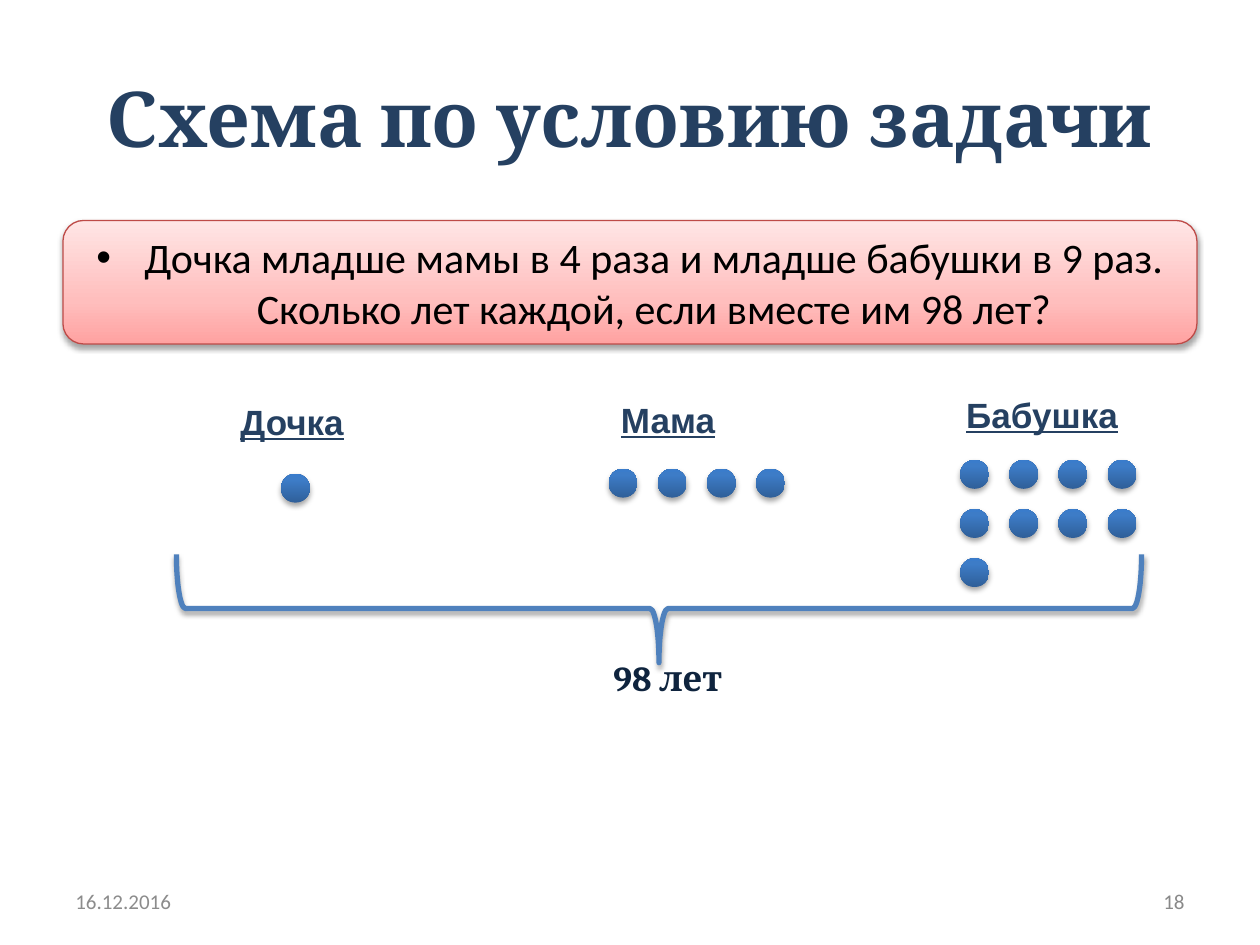
from lxml import etree
from pptx import Presentation, util as u
from pptx.dml.color import RGBColor
from pptx.enum import shapes, text
from pptx.oxml import ns

NAVY = RGBColor(0x25, 0x40, 0x61)
DARK_NAVY = RGBColor(0x0F, 0x24, 0x3E)
BLUE = RGBColor(0x4F, 0x81, 0xBD)
RED = RGBColor(0xBE, 0x4B, 0x48)
BLACK = RGBColor(0, 0, 0)
DATE_GRAY = RGBColor(0x8C, 0x8C, 0x8C)
NUMBER_GRAY = RGBColor(0x89, 0x89, 0x89)
DOT_GRADIENT = [(0, RGBColor(0x2F, 0x5F, 0x99)),
                (80, RGBColor(0x3D, 0x7C, 0xC7)),
                (100, RGBColor(0x3A, 0x7C, 0xCB))]
PANEL_GRADIENT = [(0, RGBColor(0xFF, 0xA2, 0xA1)),
                  (35, RGBColor(0xFF, 0xBE, 0xBD)),
                  (100, RGBColor(0xFF, 0xE5, 0xE5))]
LEFT, CENTER, RIGHT = text.PP_ALIGN.LEFT, text.PP_ALIGN.CENTER, text.PP_ALIGN.RIGHT
TOP, MIDDLE = text.MSO_ANCHOR.TOP, text.MSO_ANCHOR.MIDDLE


def add_child(parent, tag, **attributes):
    values = {name: str(value) for name, value in attributes.items()}
    return etree.SubElement(parent, ns.qn(tag), values)


class SlideBuilder:
    DOT_SIZE = 0.23
    DOT_STEP = 0.39
    DOTS_PER_ROW = 4

    def __init__(self, slide):
        self.slide = slide

    def set_text(self, shape, words, size, font, color, align=LEFT, anchor=TOP,
                 bold=False, underline=False, wrap=True, bullet=False):
        frame = shape.text_frame
        frame.text = words
        frame.word_wrap = wrap
        frame.vertical_anchor = anchor
        paragraph = frame.paragraphs[0]
        paragraph.alignment = align
        if bullet:
            indent = u.Inches(0.38)
            properties = paragraph._p.get_or_add_pPr()
            properties.set("marL", str(int(indent)))
            properties.set("indent", str(-int(indent)))
            add_child(properties, "a:buFont", typeface="Arial")
            add_child(properties, "a:buChar", char="•")
        style = paragraph.runs[0].font
        style.size, style.name = u.Pt(size), font
        style.bold, style.underline = bold, underline
        style.color.rgb = color

    def label(self, left, top, width, height, words, size, font, color, **style):
        box = self.slide.shapes.add_textbox(
            *map(u.Inches, (left, top, width, height)))
        self.set_text(box, words, size, font, color, **style)

    def shape(self, kind, left, top, width, height, gradient=None, line=None,
              line_width=0.75, parent=None):
        shape = (parent or self.slide).shapes.add_shape(
            kind, *map(u.Inches, (left, top, width, height)))
        if gradient:
            self.fill_gradient(shape, gradient)
        else:
            shape.fill.background()
        if line is None:
            shape.line.fill.background()
        else:
            shape.line.color.rgb = line
            shape.line.width = u.Pt(line_width)
        self.add_shadow(shape)
        return shape

    def fill_gradient(self, shape, gradient):
        shape.fill.gradient()
        shape.fill.gradient_angle = 90
        stops = shape.element.spPr.find(".//" + ns.qn("a:gsLst"))
        for stop in list(stops):
            stops.remove(stop)
        for position, color in gradient:
            stop = add_child(stops, "a:gs", pos=position * 1000)
            add_child(stop, "a:srgbClr", val=color)

    def add_shadow(self, shape):
        shape.shadow.inherit = False
        effects = shape.element.spPr.find(ns.qn("a:effectLst"))
        shadow = add_child(effects, "a:outerShdw", blurRad=int(u.Pt(3.1)),
                           dist=int(u.Pt(1.8)), dir=90 * 60000, rotWithShape=0)
        color = add_child(shadow, "a:srgbClr", val="000000")
        add_child(color, "a:alpha", val=35000)

    def dots(self, left, top, count):
        group = self.slide.shapes.add_group_shape() if count > 1 else None
        for index in range(count):
            row, column = divmod(index, self.DOTS_PER_ROW)
            self.shape(shapes.MSO_SHAPE.OVAL, left + column * self.DOT_STEP,
                       top + row * self.DOT_STEP, self.DOT_SIZE, self.DOT_SIZE,
                       DOT_GRADIENT, parent=group)

    def panel(self, left, top, width, height, words):
        panel = self.shape(shapes.MSO_SHAPE.ROUNDED_RECTANGLE, left, top, width,
                           height, PANEL_GRADIENT, RED)
        self.set_text(panel, words, 24, "Calibri", BLACK, align=CENTER,
                      anchor=MIDDLE, bullet=True)

    def brace(self, left, top, width, height):
        brace = self.shape(shapes.MSO_SHAPE.RIGHT_BRACE, left, top, width, height,
                           line=BLUE, line_width=3)
        brace.rotation = 90


def main():
    presentation = Presentation()
    presentation.slide_width, presentation.slide_height = u.Inches(10), u.Inches(7.5)
    builder = SlideBuilder(presentation.slides.add_slide(presentation.slide_layouts[6]))

    # Title and footer
    builder.label(0.5, 0.3, 9, 1.25, "Схема по условию задачи", 44, "Cambria", NAVY,
                  align=CENTER, anchor=MIDDLE, bold=True)
    builder.label(0.5, 6.95, 2.33, 0.4, "16.12.2016", 12, "Calibri", DATE_GRAY,
                  anchor=MIDDLE)
    builder.label(7.17, 6.95, 2.33, 0.4, "18", 12, "Calibri", NUMBER_GRAY,
                  align=RIGHT, anchor=MIDDLE)

    # Problem statement
    builder.panel(0.5, 1.75, 9, 0.98,
                  "Дочка младше мамы в 4 раза и младше бабушки в 9 раз. "
                  "Сколько лет каждой, если вместе им 98 лет?")

    # Family members: label box, then dots for the parts of the age
    for words, left, top, width, dots_left, dots_top, count in [
            ("Дочка", 1.81, 3.13, 1.03, 2.23, 3.76, 1),
            ("Мама", 4.83, 3.11, 0.95, 4.83, 3.72, 4),
            ("Бабушка", 7.57, 3.07, 1.41, 7.62, 3.65, 9)]:
        builder.label(left, top, width, 0.44, words, 20, "Arial", NAVY,
                      bold=True, underline=True, wrap=False)
        builder.dots(dots_left, dots_top, count)

    # Total age
    builder.brace(4.8, 1, 0.86, 7.66)
    builder.label(4.77, 5.16, 1.23, 0.44, "98 лет", 20, "Cambria", DARK_NAVY, bold=True)

    presentation.save("out.pptx")


if __name__ == "__main__":
    main()
